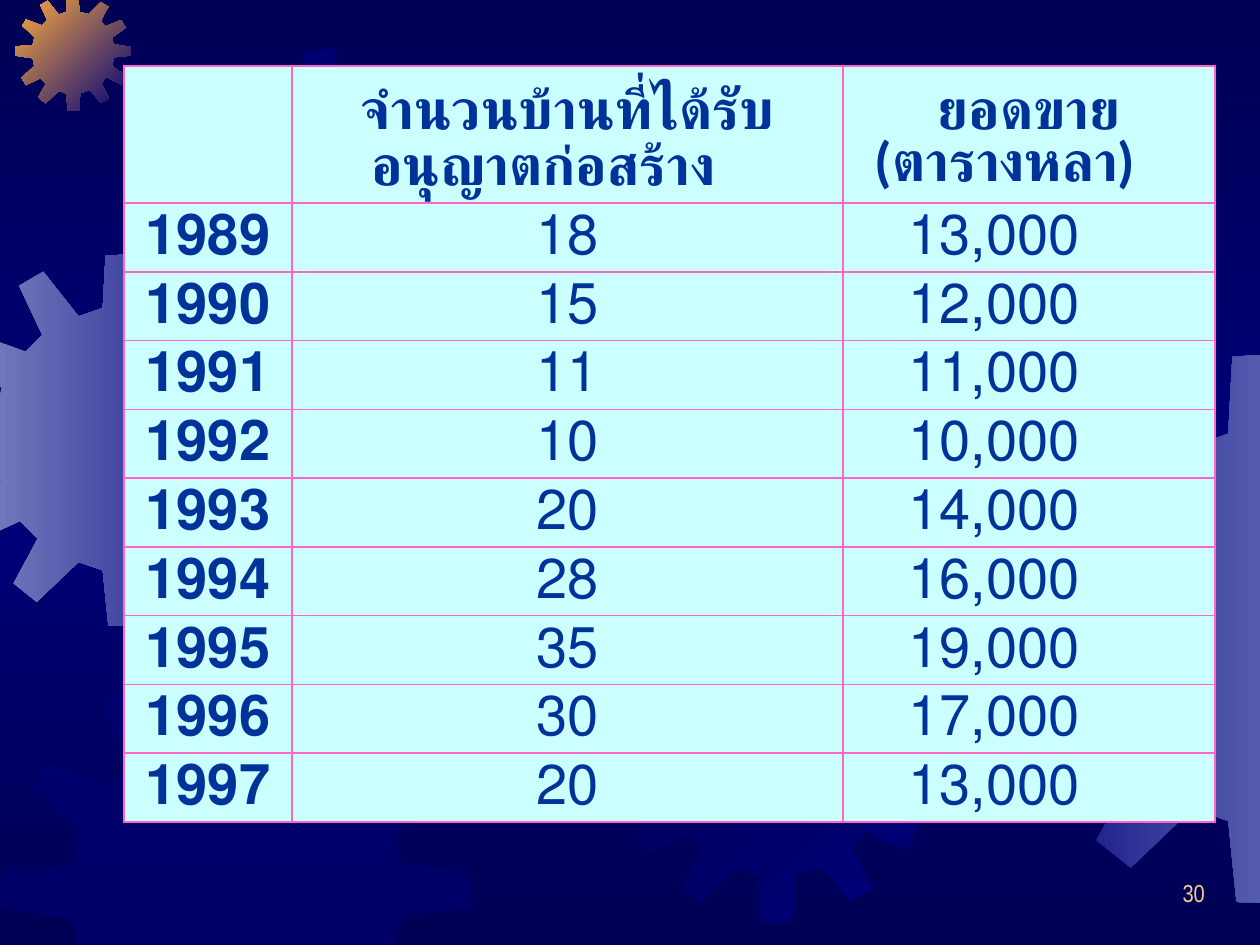
"""Build a slide with a table of building permits and sales over a background of gears."""
import copy

import pptx
import pptx.dml.color
import pptx.enum.text
import pptx.oxml
import pptx.oxml.ns
import pptx.util
from lxml import etree

Pt = pptx.util.Pt
RGBColor = pptx.dml.color.RGBColor
qn = pptx.oxml.ns.qn
ALIGN = pptx.enum.text.PP_ALIGN
ANCHOR = pptx.enum.text.MSO_ANCHOR

NIGHT = RGBColor(0x00, 0x00, 0x54)
NAVY = RGBColor(0x00, 0x00, 0x7A)
LAVENDER = RGBColor(0x71, 0x76, 0xBB)
SLATE = RGBColor(0x55, 0x5B, 0xAD)
ORANGE = RGBColor(0xFC, 0xAB, 0x40)
SAND = RGBColor(0xEB, 0xD1, 0x89)
INK = RGBColor(0x00, 0x33, 0x99)
ICE = RGBColor(0xCC, 0xFF, 0xFF)
PINK = RGBColor(0xFF, 0x66, 0xCC)

SLIDE_WIDTH, SLIDE_HEIGHT = 720, 540
HEADER = ("", "จำนวนบ้านที่ได้รับอนุญาตก่อสร้าง", "ยอดขาย (ตารางหลา)")
RECORDS = [
    ("1989", "18", "13,000"),
    ("1990", "15", "12,000"),
    ("1991", "11", "11,000"),
    ("1992", "10", "10,000"),
    ("1993", "20", "14,000"),
    ("1994", "28", "16,000"),
    ("1995", "35", "19,000"),
    ("1996", "30", "17,000"),
    ("1997", "20", "13,000"),
]
TABLE_LEFT, TABLE_TOP = 70.8, 37.8
COLUMN_WIDTHS = (96, 315, 212.4)
HEADER_HEIGHT, ROW_HEIGHT = 78.3, 39.3
HANGING_INDENT = 27.4
SALES_MARGIN = 47

GEAR_SPAN = 401
GEAR_OUTLINE = [
    (255, 67), (223, 59), (219, 0), (180, 3), (177, 59), (151, 68), (113, 20), (87, 35),
    (112, 88), (94, 106), (38, 85), (25, 107), (68, 145), (61, 174), (1, 178), (0, 210),
    (61, 219), (67, 246), (22, 287), (38, 312), (88, 288), (107, 307), (81, 355), (106, 375),
    (151, 332), (177, 341), (183, 400), (222, 401), (226, 339), (259, 330), (299, 374), (325, 358),
    (299, 306), (316, 284), (368, 309), (384, 281), (336, 246), (342, 216), (401, 210), (400, 180),
    (341, 171), (335, 148), (383, 114), (367, 87), (313, 109), (296, 91), (323, 41), (297, 25),
]
GEARS = [
    (-35.3, 144.7, 213.1, (LAVENDER, NAVY), 0),
    (8.6, -2.9, 66.2, (ORANGE, NAVY), 45),
    (93.6, 28.1, 178.6, (NIGHT, NAVY), 315),
    (199.4, 100.1, 288.7, (NAVY, NIGHT), 45),
    (0, 378, 269.3, (NAVY,), 0),
    (353.5, 348.5, 178.6, (NIGHT, NAVY), 45),
    (445, 38.2, 230.4, (NAVY, NIGHT), 45),
    (563, 201.6, 314.6, (NAVY, SLATE), 0),
]
SLIDE_EDGES = [(0, 1, 0), (0, -1, SLIDE_WIDTH), (1, 1, 0), (1, -1, SLIDE_HEIGHT)]


def set_attributes(target, values):
    for name, value in values.items():
        setattr(target, name, value)


def fill_gradient(fill, element, colors, angle):
    fill.gradient()
    fill.gradient_angle = (360 - angle) % 360
    stop_list = next(element.iter(qn("a:gsLst")))
    while len(stop_list) < len(colors):
        stop_list.append(copy.deepcopy(stop_list[0]))
    for index, (stop, color) in enumerate(zip(fill.gradient_stops, colors)):
        stop.position = index / (len(colors) - 1)
        stop.color.rgb = color


def clip(points, axis, sign, limit):
    kept = []
    for start, end in zip(points[-1:] + points[:-1], points):
        start_depth, end_depth = (sign * (point[axis] - limit) for point in (start, end))
        if (start_depth >= 0) != (end_depth >= 0):
            ratio = start_depth / (start_depth - end_depth)
            kept.append(tuple(a + ratio * (b - a) for a, b in zip(start, end)))
        if end_depth >= 0:
            kept.append(end)
    return kept


def add_gear(slide, left, top, size, colors, angle):
    scale = size / GEAR_SPAN
    points = [(left + x * scale, top + y * scale) for x, y in GEAR_OUTLINE]
    for edge in SLIDE_EDGES:
        points = clip(points, *edge)
    corners = [(Pt(x), Pt(y)) for x, y in points]
    builder = slide.shapes.build_freeform(*corners[0])
    builder.add_line_segments(corners[1:], close=True)
    shape = builder.convert_to_shape()
    shape.shadow.inherit = False
    shape.line.fill.background()
    if len(colors) > 1:
        fill_gradient(shape.fill, shape.element, colors, angle)
    else:
        shape.fill.solid()
        shape.fill.fore_color.rgb = colors[0]
        color_element = next(shape.element.iter(qn("a:srgbClr")))
        etree.SubElement(color_element, qn("a:alpha"), val="50000")


def add_borders(cell):
    properties = cell._tc.get_or_add_tcPr()
    for index, side in enumerate(("lnL", "lnR", "lnT", "lnB")):
        line = etree.Element(qn("a:" + side), w=str(Pt(1)))
        solid = etree.SubElement(line, qn("a:solidFill"))
        etree.SubElement(solid, qn("a:srgbClr"), val=str(PINK))
        properties.insert(index, line)


def write_cell(cell, text, bold):
    cell.fill.solid()
    cell.fill.fore_color.rgb = ICE
    cell.vertical_anchor = ANCHOR.BOTTOM
    add_borders(cell)
    paragraph = cell.text_frame.paragraphs[0]
    set_attributes(paragraph, {"alignment": ALIGN.CENTER, "line_spacing": Pt(32)})
    indents = {"marL": Pt(HANGING_INDENT), "indent": -Pt(HANGING_INDENT), "rtl": 1}
    for name, value in indents.items():
        paragraph._p.get_or_add_pPr().set(name, str(value))
    if text:
        run = paragraph.add_run()
        run.text = text
        set_attributes(run.font, {"name": "Calibri", "size": Pt(32), "bold": bold})
        run.font.color.rgb = INK


def add_table(slide):
    rows = [HEADER] + RECORDS
    heights = [HEADER_HEIGHT] + [ROW_HEIGHT] * len(RECORDS)
    table = slide.shapes.add_table(
        len(rows), len(HEADER), Pt(TABLE_LEFT), Pt(TABLE_TOP),
        Pt(sum(COLUMN_WIDTHS)), Pt(sum(heights))).table
    set_attributes(table, {"first_row": False, "horz_banding": False})
    for column, width in zip(table.columns, COLUMN_WIDTHS):
        column.width = Pt(width)
    for row_index, (texts, height) in enumerate(zip(rows, heights)):
        table.rows[row_index].height = Pt(height)
        for column_index, text in enumerate(texts):
            cell = table.cell(row_index, column_index)
            write_cell(cell, text, row_index == 0 or column_index == 0)
            if row_index and column_index == 2:
                cell.margin_right = Pt(SALES_MARGIN)


def add_slide_number(slide):
    frame = slide.shapes.add_textbox(Pt(545.8), Pt(498.2), Pt(149.8), Pt(36)).text_frame
    frame.word_wrap = True
    paragraph = frame.paragraphs[0]
    paragraph.alignment = ALIGN.RIGHT
    run = paragraph.add_run()
    run.text = "30"
    set_attributes(run.font, {"name": "Arial Narrow", "size": Pt(14)})
    run.font.color.rgb = SAND


def main():
    presentation = pptx.Presentation()
    set_attributes(presentation, {"slide_width": Pt(SLIDE_WIDTH), "slide_height": Pt(SLIDE_HEIGHT)})
    slide = presentation.slides.add_slide(presentation.slide_layouts[6])
    fill_gradient(slide.background.fill, slide.element, (NIGHT, NAVY, NIGHT), 90)
    for gear in GEARS:
        add_gear(slide, *gear)
    add_slide_number(slide)
    add_table(slide)
    presentation.save("out.pptx")


if __name__ == "__main__":
    main()
